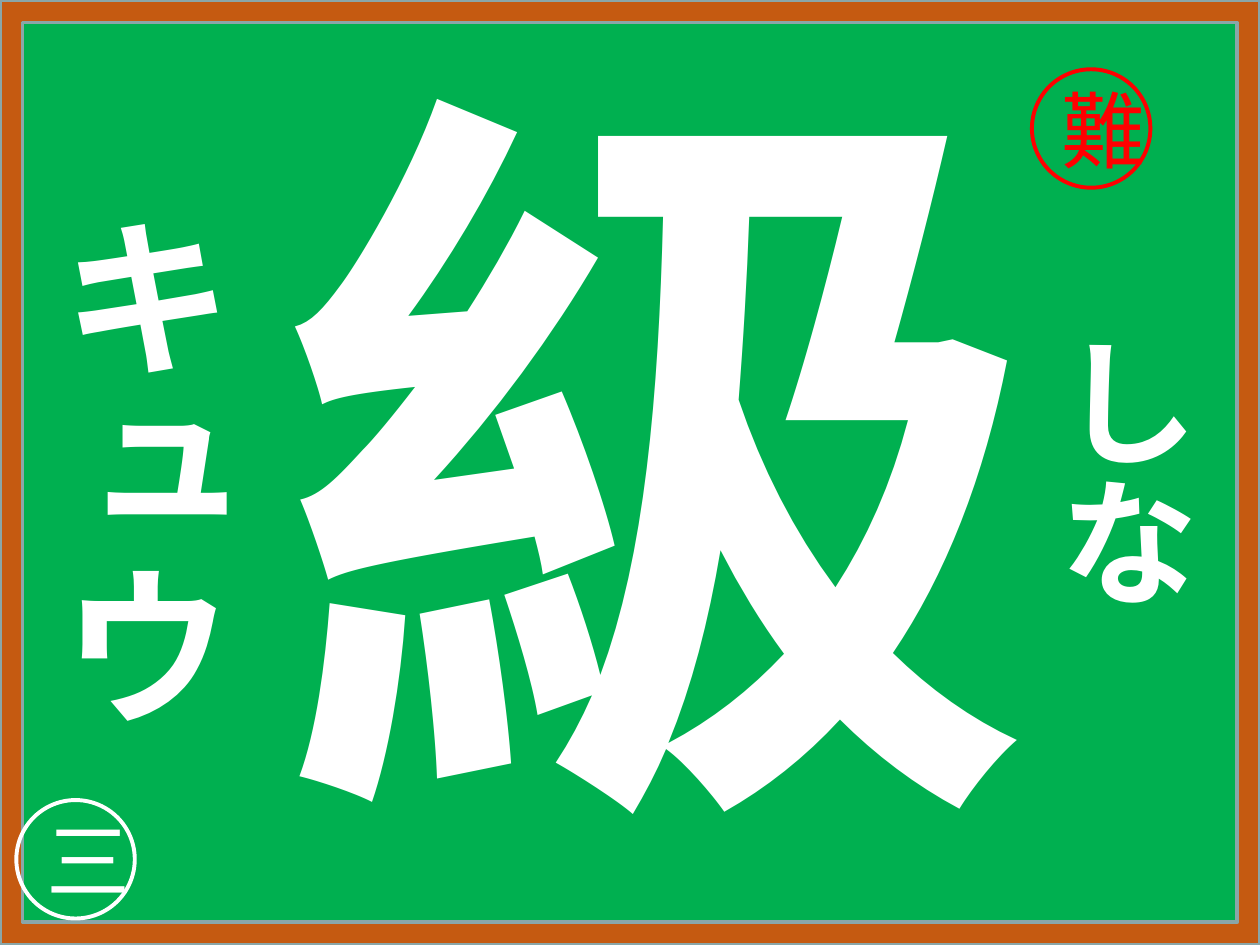
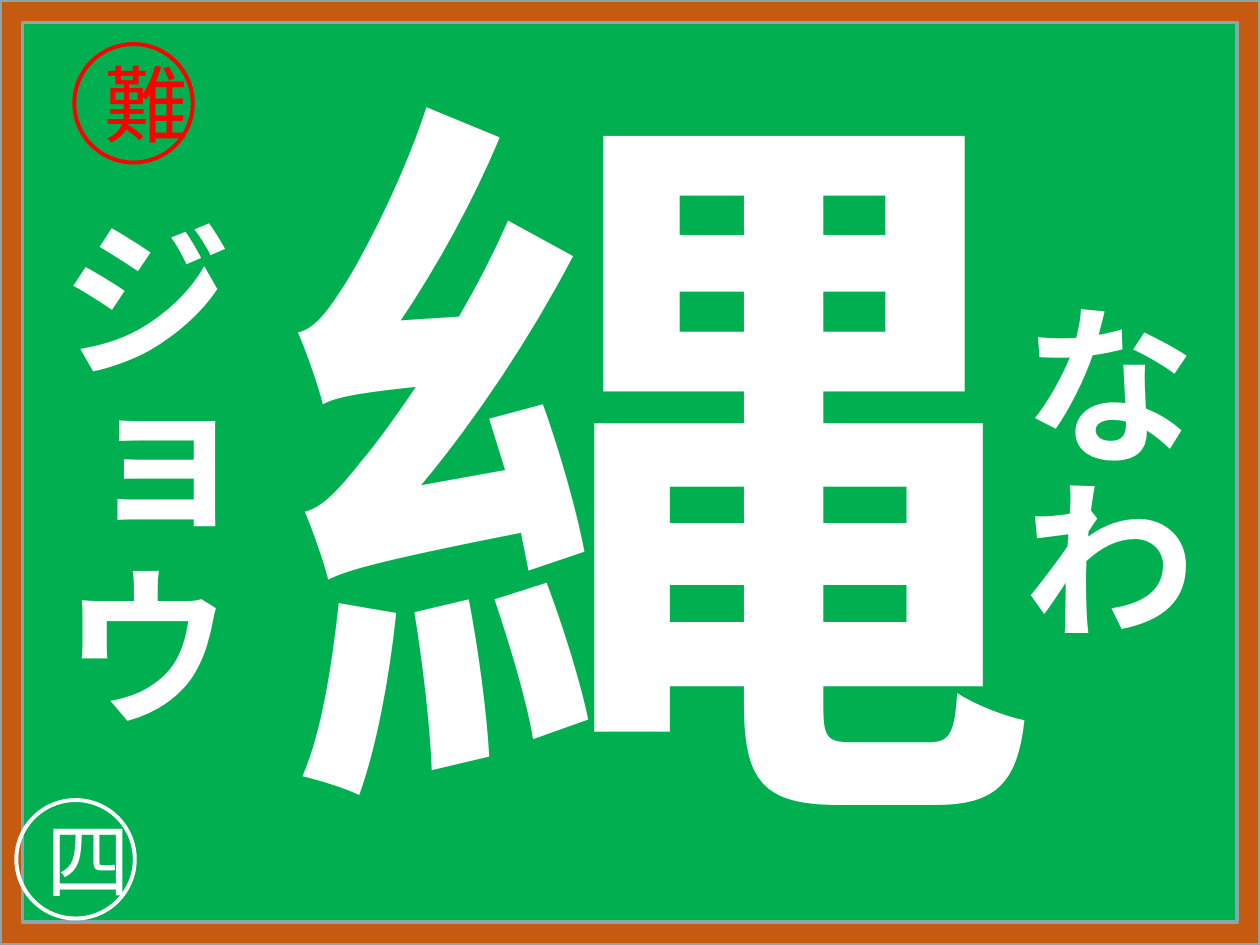
from lxml import etree
from pptx import Presentation
from pptx import util as u
from pptx.dml.color import RGBColor
from pptx.enum import shapes, text
from pptx.oxml.ns import qn

FONT = "Noto Sans CJK JP"
BOARD, WOOD, WOOD_EDGE = "00B050", "C55A11", "8AA6A8"
CHALK, RED = "FFFFFF", "FF0000"
BADGE_SIZE = 0.94

# kanji, on reading, kun reading with its box and size, school grade, place of the "hard" mark
CARDS = [
    ("級", "キュウ", "しな", (8.09, 2.54, 1.55, 2.3), 80, "三", (8.19, 0.55)),
    ("縄", "ジョウ", "なわ", (7.76, 2.26, 1.88, 2.85), 100, "四", (0.59, 0.35)),
]


def rgb(hex_color):
    return RGBColor.from_string(hex_color)


def write(shape, words, size, color=CHALK, bold=False, vertical=False,
          anchor=text.MSO_ANCHOR.MIDDLE):
    frame = shape.text_frame
    frame.word_wrap = True
    frame.vertical_anchor = anchor
    if vertical:
        shape.element.txBody.bodyPr.set("vert", "eaVert")
    paragraph = frame.paragraphs[0]
    paragraph.alignment = text.PP_ALIGN.CENTER
    run = paragraph.add_run()
    run.text = words
    run.font.size = u.Pt(size)
    run.font.bold = bold
    run.font.color.rgb = rgb(color)
    run.font.name = FONT
    east_asian = etree.SubElement(run.font._element, qn("a:ea"))
    east_asian.set("typeface", FONT)
    return frame


class KanjiCard:
    """One blackboard slide with a large kanji, its readings and badges."""

    def __init__(self, deck):
        self.slide = deck.slides.add_slide(deck.slide_layouts[6])
        self.size = (deck.slide_width, deck.slide_height)

    def outline(self, kind, box, color, width):
        shape = self.slide.shapes.add_shape(kind, *box)
        shape.shadow.inherit = False
        shape.fill.background()
        shape.line.color.rgb = rgb(color)
        shape.line.width = u.Pt(width)
        return shape

    def board_frame(self):
        border = self.outline(shapes.MSO_SHAPE.FRAME, (0, 0, *self.size), WOOD_EDGE, 2)
        border.adjustments[0] = 0.024
        border.fill.solid()
        border.fill.fore_color.rgb = rgb(WOOD)

    def text_box(self, box):
        return self.slide.shapes.add_textbox(*map(u.Inches, box))

    def kanji(self, character):
        write(self.text_box((1.81, 0.55, 6.38, 6.27)), character, 432,
              bold=True, vertical=True)

    def reading(self, kana, box, size):
        frame = write(self.text_box(box), kana, size, bold=True, vertical=True,
                      anchor=text.MSO_ANCHOR.TOP)
        frame.word_wrap = False
        frame.auto_size = text.MSO_AUTO_SIZE.SHAPE_TO_FIT_TEXT

    def badge(self, mark, left, top, color):
        box = map(u.Inches, (left, top, BADGE_SIZE, BADGE_SIZE))
        circle = self.outline(shapes.MSO_SHAPE.OVAL, box, color, 2.25)
        write(circle, mark, 48, color)


def main():
    deck = Presentation()
    deck.slide_width, deck.slide_height = u.Inches(10), u.Inches(7.5)
    board = deck.slide_master.background.fill
    board.solid()
    board.fore_color.rgb = rgb(BOARD)

    for kanji, on_reading, kun_reading, kun_box, kun_size, grade, hard_place in CARDS:
        card = KanjiCard(deck)
        card.board_frame()
        card.kanji(kanji)
        card.reading(kun_reading, kun_box, kun_size)
        card.reading(on_reading, (0.12, 1.57, 1.88, 4.23), 100)
        card.badge(grade, 0.13, 6.35, CHALK)
        card.badge("難", *hard_place, RED)

    deck.save("out.pptx")


if __name__ == "__main__":
    main()
